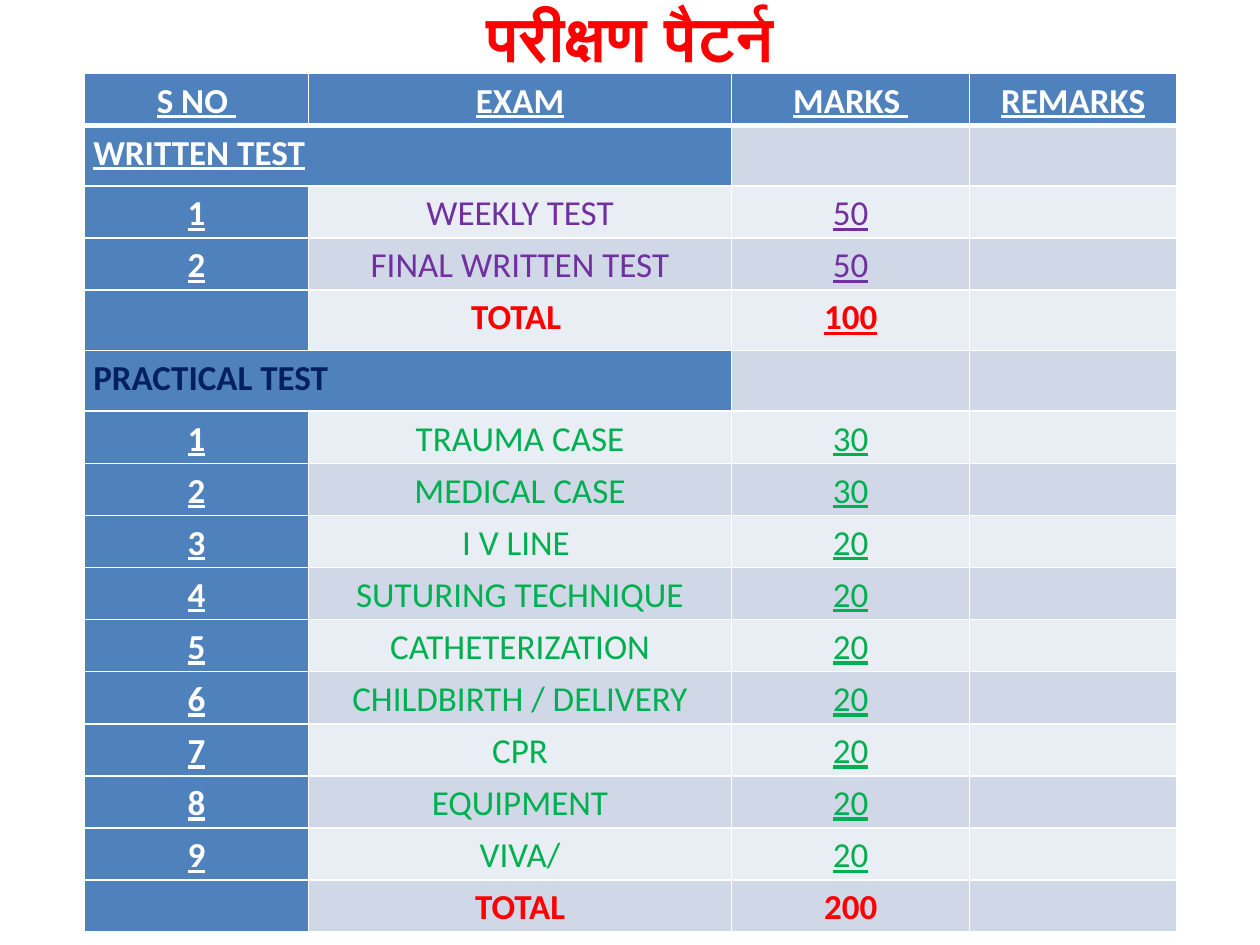
"""Build the test pattern slide: a title over a table of exams and marks."""
from lxml import etree
from pptx import Presentation
from pptx.dml.color import RGBColor
from pptx.enum import text
from pptx.oxml import ns
from pptx.util import Cm, Pt

WHITE, RED, PURPLE, GREEN, NAVY = "FFFFFF", "FF0000", "7030A0", "00B050", "002060"
BLUE, DARK_BAND, LIGHT_BAND = "4F81BD", "D0D8E8", "E9EDF4"


def style(p, color, size=20, bold=True, underline=False, align=text.PP_ALIGN.CENTER):
    """Set the alignment and font of one paragraph."""
    p.alignment = align
    f = p.font
    f.name, f.size, f.bold, f.underline = "Calibri", Pt(size), bold, underline
    f.color.rgb = RGBColor.from_string(color)


def border(cell, bottom):
    """Give a cell white borders, with its own bottom width in points."""
    tcPr = cell._tc.get_or_add_tcPr()
    for i, (side, width) in enumerate((("L", 1), ("R", 1), ("T", 1), ("B", bottom))):
        ln = etree.Element(ns.qn(f"a:ln{side}"), w=str(Pt(width)))
        fill = etree.SubElement(ln, ns.qn("a:solidFill"))
        etree.SubElement(fill, ns.qn("a:srgbClr"), val=WHITE)
        tcPr.insert(i, ln)


header = ["S NO ", "EXAM", "MARKS ", "REMARKS"]
written = [("WEEKLY TEST", "50"), ("FINAL WRITTEN TEST", "50")]
practical = [
    ("TRAUMA CASE", "30"), ("MEDICAL CASE", "30"), ("I V LINE ", "20"),
    ("SUTURING TECHNIQUE", "20"), ("CATHETERIZATION", "20"),
    ("CHILDBIRTH / DELIVERY", "20"), ("CPR", "20"), ("EQUIPMENT", "20"), ("VIVA/", "20"),
]

rows = [[(h, WHITE, True, True) for h in header]]
for name, name_color, name_line, color, exams, total, total_line in (
    ("WRITTEN TEST", WHITE, True, PURPLE, written, ("TOTAL ", "100"), True),
    ("PRACTICAL TEST", NAVY, False, GREEN, practical, ("TOTAL", "200"), False),
):
    rows.append([(name, name_color, True, name_line)])
    for n, (exam, marks) in enumerate(exams, 1):
        rows.append([(str(n), WHITE, True, True), (exam, color, False, False), (marks, color, False, True)])
    rows.append([None, (total[0], RED, True, False), (total[1], RED, True, total_line)])

prs = Presentation()
prs.slide_width, prs.slide_height = Cm(25.4), Cm(19.05)
s = prs.slides.add_slide(prs.slide_layouts[5])

title = s.shapes.title
title.left, title.top, title.width, title.height = Cm(1.27), Cm(0), Cm(22.86), Cm(1.48)
tf = title.text_frame
tf.text = "परीक्षण पैटर्न"
tf.auto_size = text.MSO_AUTO_SIZE.NONE
tf.vertical_anchor = text.MSO_ANCHOR.MIDDLE
style(tf.paragraphs[0], RED, size=36)

table = s.shapes.add_table(len(rows), 4, Cm(1.7), Cm(1.48), Cm(22.02), Cm(17.3)).table
for col, width in zip(table.columns, (4.52, 8.53, 4.8, 4.17)):
    col.width = Cm(width)

for i, entries in enumerate(rows):
    section = len(entries) == 1
    table.rows[i].height = Cm(1.22 if section or i == 4 else 1.05)
    if section:
        table.cell(i, 0).merge(table.cell(i, 1))
    for j in range(4):
        cell = table.cell(i, j)
        cell.fill.solid()
        band = DARK_BAND if i % 2 else LIGHT_BAND
        fill = BLUE if i == 0 or j == 0 or (section and j == 1) else band
        cell.fill.fore_color.rgb = RGBColor.from_string(fill)
        border(cell, 3 if i == 0 else 1)
        if j < len(entries) and entries[j]:
            words, color, bold, underline = entries[j]
            cell.margin_left = cell.margin_right = Cm(0.18)
            cell.margin_top = cell.margin_bottom = 0
            p = cell.text_frame.paragraphs[0]
            p.text = words
            p.line_spacing = 1.15
            align = text.PP_ALIGN.LEFT if section else text.PP_ALIGN.CENTER
            style(p, color, bold=bold, underline=underline, align=align)

prs.save("out.pptx")
